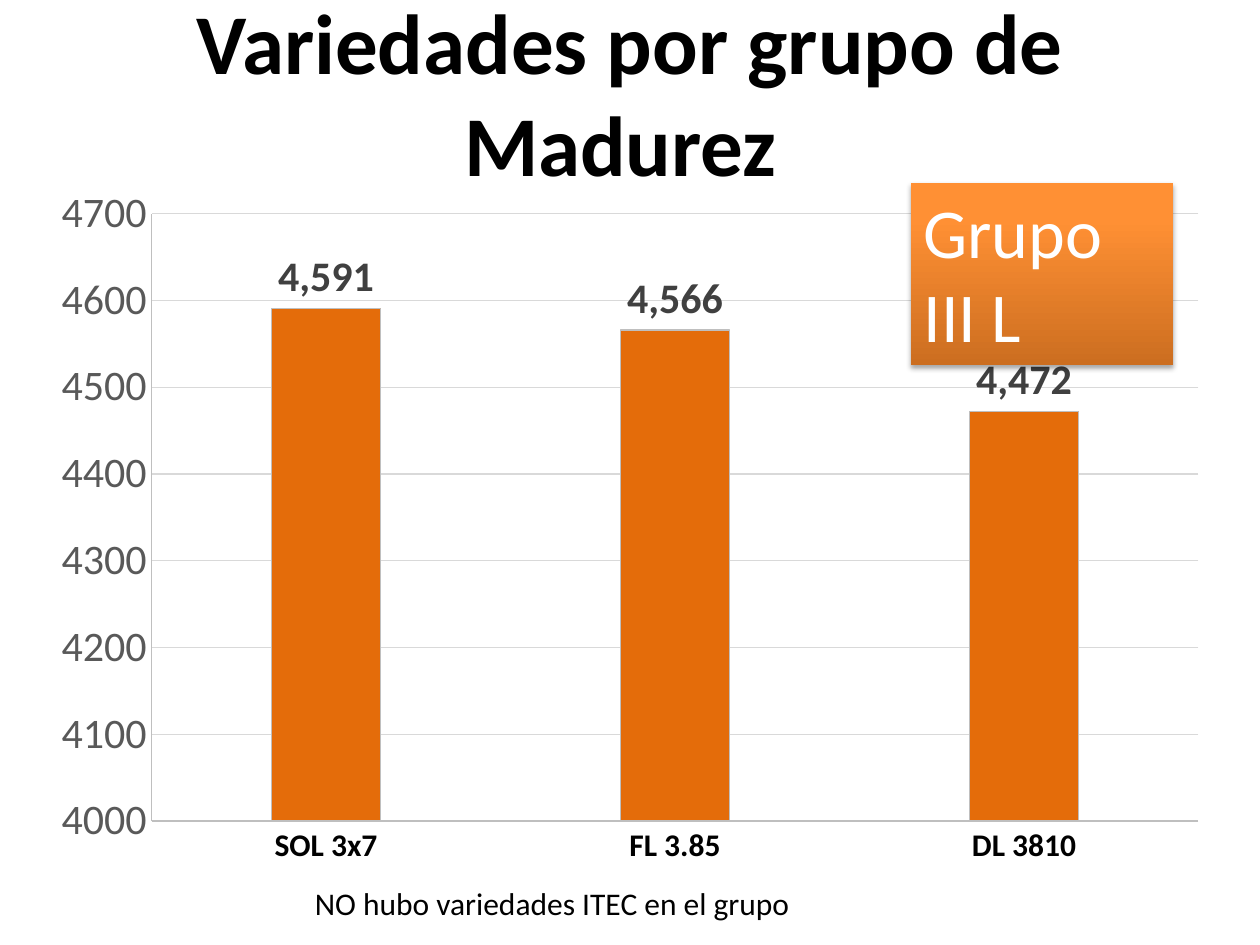
from lxml import etree
from pptx import Presentation
from pptx.chart.data import CategoryChartData
from pptx.dml.color import RGBColor
from pptx.enum.chart import XL_CHART_TYPE, XL_LABEL_POSITION, XL_TICK_MARK
from pptx.enum.shapes import MSO_SHAPE
from pptx.enum.text import MSO_ANCHOR, MSO_AUTO_SIZE, PP_ALIGN
from pptx.oxml.ns import qn
from pptx.util import Pt

COLUMNS = XL_CHART_TYPE.COLUMN_CLUSTERED
OUTSIDE_END = XL_LABEL_POSITION.OUTSIDE_END
NO_TICKS = XL_TICK_MARK.NONE
RECTANGLE = MSO_SHAPE.RECTANGLE
MIDDLE, TOP = MSO_ANCHOR.MIDDLE, MSO_ANCHOR.TOP
CENTER, LEFT = PP_ALIGN.CENTER, PP_ALIGN.LEFT
NO_AUTOFIT = MSO_AUTO_SIZE.NONE
FIT_SHAPE = MSO_AUTO_SIZE.SHAPE_TO_FIT_TEXT
AXIS_GRAY, GRID_GRAY = "BFBFBF", "D9D9D9"


def style_font(font, size, color, bold=False):
    font.name = "Calibri"
    font.size = Pt(size)
    font.bold = bold
    font.color.rgb = RGBColor.from_string(color)


def write_text(shape, text, size, color, bold, alignment, anchor, fit):
    frame = shape.text_frame
    frame.word_wrap = True
    frame.auto_size = fit
    frame.vertical_anchor = anchor
    paragraph = frame.paragraphs[0]
    paragraph.alignment = alignment
    run = paragraph.add_run()
    run.text = text
    style_font(run.font, size, color, bold)


presentation = Presentation()
presentation.slide_width = Pt(720)
presentation.slide_height = Pt(540)
slide = presentation.slides.add_slide(presentation.slide_layouts[5])

# Title
title = slide.shapes.title
title.left, title.top, title.width, title.height = Pt(49.7), Pt(0), Pt(620.6), Pt(104.4)
write_text(title, "Variedades por grupo de Madurez ", 48.6, "000000", True,
           CENTER, MIDDLE, NO_AUTOFIT)

# Yield chart
chart_data = CategoryChartData(number_format="#,##0")
chart_data.categories = ["SOL 3x7", "FL 3.85", "DL 3810"]
chart_data.add_series("Series 1", [4591, 4566, 4472])
chart_frame = slide.shapes.add_chart(
    COLUMNS, Pt(21.6), Pt(99.4), Pt(676.8), Pt(402.5), chart_data)
chart = chart_frame.chart
chart.has_title = False
chart.has_legend = False
style_font(chart.font, 10, "000000")

plot = chart.plots[0]
plot.gap_width = 219
plot.overlap = -27
plot.vary_by_categories = False

series = plot.series[0]
series.format.fill.solid()
series.format.fill.fore_color.rgb = RGBColor.from_string("E46C0A")
labels = series.data_labels
labels.show_value = True
labels.position = OUTSIDE_END
labels.number_format = "#,##0"
labels.number_format_is_linked = False
style_font(labels.font, 24, "404040", True)

category_axis, value_axis = chart.category_axis, chart.value_axis
for axis in (category_axis, value_axis):
    axis.major_tick_mark = axis.minor_tick_mark = NO_TICKS
style_font(category_axis.tick_labels.font, 18, "000000", True)
style_font(value_axis.tick_labels.font, 24, "595959")
value_axis.minimum_scale = 4000
value_axis.maximum_scale = 4700
value_axis.major_unit = 100
value_axis.tick_labels.number_format = "0"
value_axis.tick_labels.number_format_is_linked = False
value_axis.has_major_gridlines = True

for part, color in ((series, AXIS_GRAY), (category_axis, AXIS_GRAY),
                    (value_axis, AXIS_GRAY), (value_axis.major_gridlines, GRID_GRAY)):
    part.format.line.color.rgb = RGBColor.from_string(color)
    part.format.line.width = Pt(0.75)

# Footnote
note = slide.shapes.add_textbox(Pt(172.8), Pt(501.8), Pt(428.4), Pt(29.5))
write_text(note, "NO hubo variedades ITEC en el grupo", 18, "000000", False,
           LEFT, TOP, FIT_SHAPE)

# Group badge, dark at the bottom, with a soft shadow below
badge = slide.shapes.add_shape(RECTANGLE, Pt(520.6), Pt(104.4), Pt(149.8), Pt(104.4))
badge.line.fill.background()
badge.fill.gradient()
badge.fill.gradient_angle = 90
stop_list = badge.fill._fill._gradFill.find(qn("a:gsLst"))
for stop in list(stop_list):
    stop_list.remove(stop)
for position, color in ((0, "CC6E20"), (80, "FF9034"), (100, "FF9136")):
    stop = etree.SubElement(stop_list, qn("a:gs"), pos=str(position * 1000))
    etree.SubElement(stop, qn("a:srgbClr"), val=color)
badge.shadow.inherit = False
effects = badge.element.spPr.find(qn("a:effectLst"))
shadow = etree.SubElement(effects, qn("a:outerShdw"), blurRad=str(Pt(3.1)),
                          dist=str(Pt(1.8)), dir="5400000", rotWithShape="0")
shadow_color = etree.SubElement(shadow, qn("a:srgbClr"), val="000000")
etree.SubElement(shadow_color, qn("a:alpha"), val="35000")
write_text(badge, "Grupo III L", 40, "FFFFFF", False, LEFT, TOP, FIT_SHAPE)

presentation.save("out.pptx")
